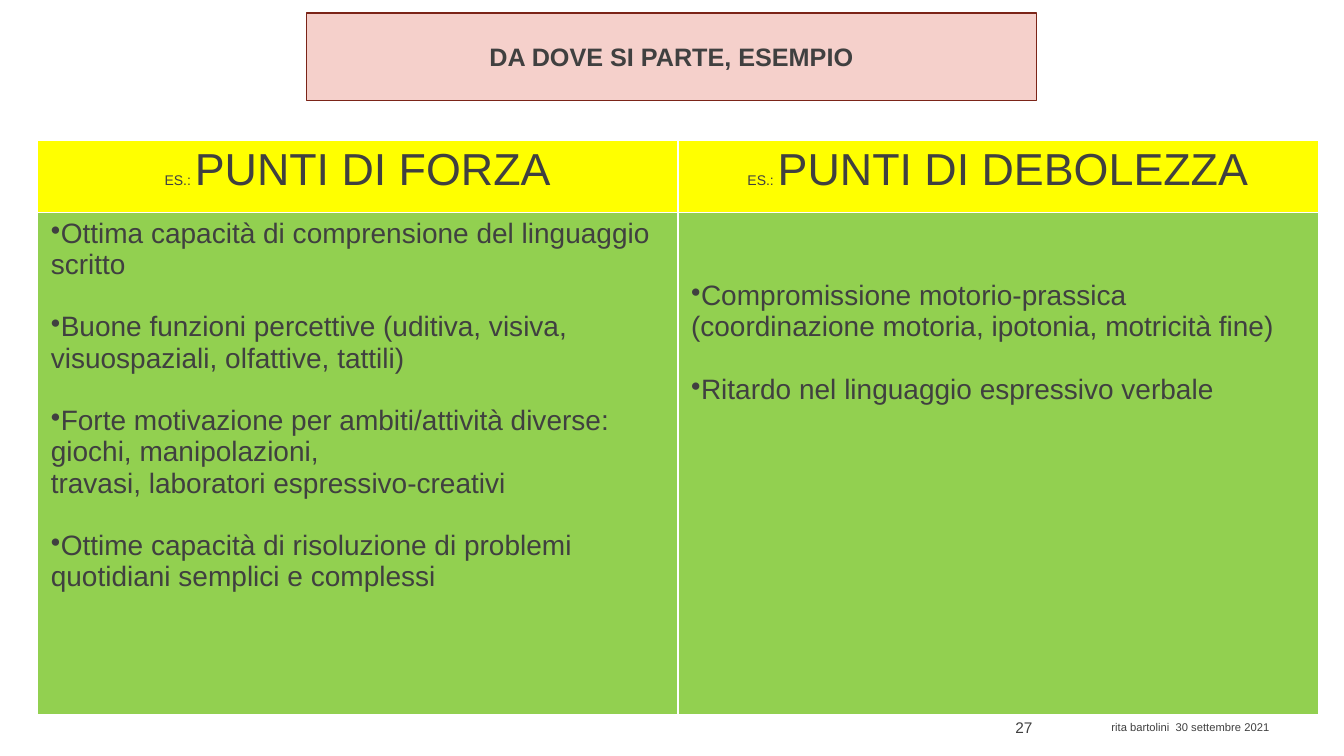
from dataclasses import dataclass

from lxml.etree import SubElement
from pptx import Presentation
from pptx.dml.color import RGBColor
from pptx.enum.text import MSO_ANCHOR as Anchor, MSO_AUTO_SIZE as AutoSize, PP_ALIGN as Align
from pptx.oxml import parse_xml
from pptx.oxml.ns import nsdecls, qn
from pptx.util import Cm, Pt

# Content
TITLE = "DA DOVE SI PARTE, ESEMPIO"
PREFIX = "ES.: "
# Each point is a list of paragraphs; only the first one has a bullet.
COLUMNS = [
    {
        "heading": "PUNTI DI FORZA",
        "top_margin": 0.13,
        "points": [
            ["Ottima capacità di comprensione del linguaggio scritto"],
            ["Buone funzioni percettive (uditiva, visiva, visuospaziali, olfattive, tattili)"],
            ["Forte motivazione per ambiti/attività diverse: giochi, manipolazioni,",
             "travasi, laboratori espressivo-creativi"],
            ["Ottime capacità di risoluzione di problemi quotidiani semplici e complessi"],
        ],
    },
    {
        "heading": "PUNTI DI DEBOLEZZA",
        "top_margin": 1.7,
        "points": [
            ["Compromissione motorio-prassica (coordinazione motoria, ipotonia, motricità fine)"],
            ["Ritardo nel linguaggio espressivo verbale"],
        ],
    },
]
PAGE_NUMBER = "27"
FOOTER = "rita bartolini  30 settembre 2021"


@dataclass(frozen=True)
class Theme:
    font: str = "Arial"
    ink: str = "404040"
    title_fill: str = "F5D0CB"
    title_line: str = "7B2418"
    heading_fill: str = "FFFF00"
    body_fill: str = "92D050"
    border: str = "FFFFFF"
    title_size: float = 18
    heading_size: float = 32
    prefix_size: float = 10
    body_size: float = 20
    number_size: float = 11
    footer_size: float = 8
    point_gap: float = 22.3


THEME = Theme()


def color(code):
    return RGBColor.from_string(code)


def write(para, text, size, bold=False, align=None, before=0, bullet=False):
    """Add a formatted span to a paragraph."""
    if align is not None:
        para.alignment = align
    if before:
        para.space_before = Pt(before)
    if bullet:
        props = para._p.get_or_add_pPr()
        props.set("marL", "0")
        props.set("indent", "0")
        SubElement(props, qn("a:buChar")).set("char", "•")
    span = para.add_run()
    span.text = text
    span.font.name = THEME.font
    span.font.size = Pt(size)
    span.font.bold = bold
    span.font.color.rgb = color(THEME.ink)


def format_cell(cell, fill, top=0.13):
    cell.fill.solid()
    cell.fill.fore_color.rgb = color(fill)
    cell.margin_left = cell.margin_right = Cm(0.33)
    cell.margin_top, cell.margin_bottom = Cm(top), Cm(0.13)
    for index, side in enumerate(("lnL", "lnR", "lnT", "lnB")):
        edge = parse_xml(
            f'<a:{side} {nsdecls("a")} w="{Pt(1)}"><a:solidFill>'
            f'<a:srgbClr val="{THEME.border}"/></a:solidFill></a:{side}>')
        cell._tc.get_or_add_tcPr().insert(index, edge)


def add_label(page, place, text, size, anchor, align):
    box = page.shapes.add_textbox(*map(Cm, place))
    box.text_frame.word_wrap = True
    box.text_frame.vertical_anchor = anchor
    write(box.text_frame.paragraphs[0], text, size, align=align)


def add_title(page):
    box = page.shapes.title
    box.left, box.top, box.width, box.height = map(Cm, (7.72, 0.33, 18.4, 2.2))
    box.fill.solid()
    box.fill.fore_color.rgb = color(THEME.title_fill)
    box.line.color.rgb = color(THEME.title_line)
    box.line.width = Pt(1)
    frame = box.text_frame
    frame.auto_size = AutoSize.NONE
    frame.vertical_anchor = Anchor.MIDDLE
    write(frame.paragraphs[0], TITLE, THEME.title_size, bold=True, align=Align.CENTER)


def add_points_table(page):
    heights = (1.83, 12.65)
    width = 32.27
    table = page.shapes.add_table(
        len(heights), len(COLUMNS), Cm(0.95), Cm(3.53), Cm(width), Cm(sum(heights))).table
    table.first_row = table.horz_banding = False
    for row, height in zip(table.rows, heights):
        row.height = Cm(height)
    for index, column in enumerate(COLUMNS):
        table.columns[index].width = Cm(width / len(COLUMNS))

        # Heading
        cell = table.cell(0, index)
        format_cell(cell, THEME.heading_fill)
        para = cell.text_frame.paragraphs[0]
        write(para, PREFIX, THEME.prefix_size, align=Align.CENTER)
        write(para, column["heading"], THEME.heading_size)

        # Points
        cell = table.cell(1, index)
        format_cell(cell, THEME.body_fill, column["top_margin"])
        frame = cell.text_frame
        for number, point in enumerate(column["points"]):
            for line, text in enumerate(point):
                first = number == line == 0
                para = frame.paragraphs[0] if first else frame.add_paragraph()
                gap = THEME.point_gap if number and line == 0 else 0
                write(para, text, THEME.body_size, before=gap, bullet=line == 0)


def main():
    deck = Presentation()
    deck.slide_width, deck.slide_height = Cm(33.87), Cm(19.05)
    page = deck.slides.add_slide(deck.slide_layouts[5])

    # Page number, table, footer and title, from back to front
    add_label(page, (23.93, 17.83, 2.34, 1.02), PAGE_NUMBER, THEME.number_size,
              Anchor.MIDDLE, Align.RIGHT)
    add_points_table(page)
    add_label(page, (27.76, 18.03, 6.1, 1.02), FOOTER, THEME.footer_size,
              Anchor.TOP, Align.LEFT)
    add_title(page)
    deck.save("out.pptx")


if __name__ == "__main__":
    main()
